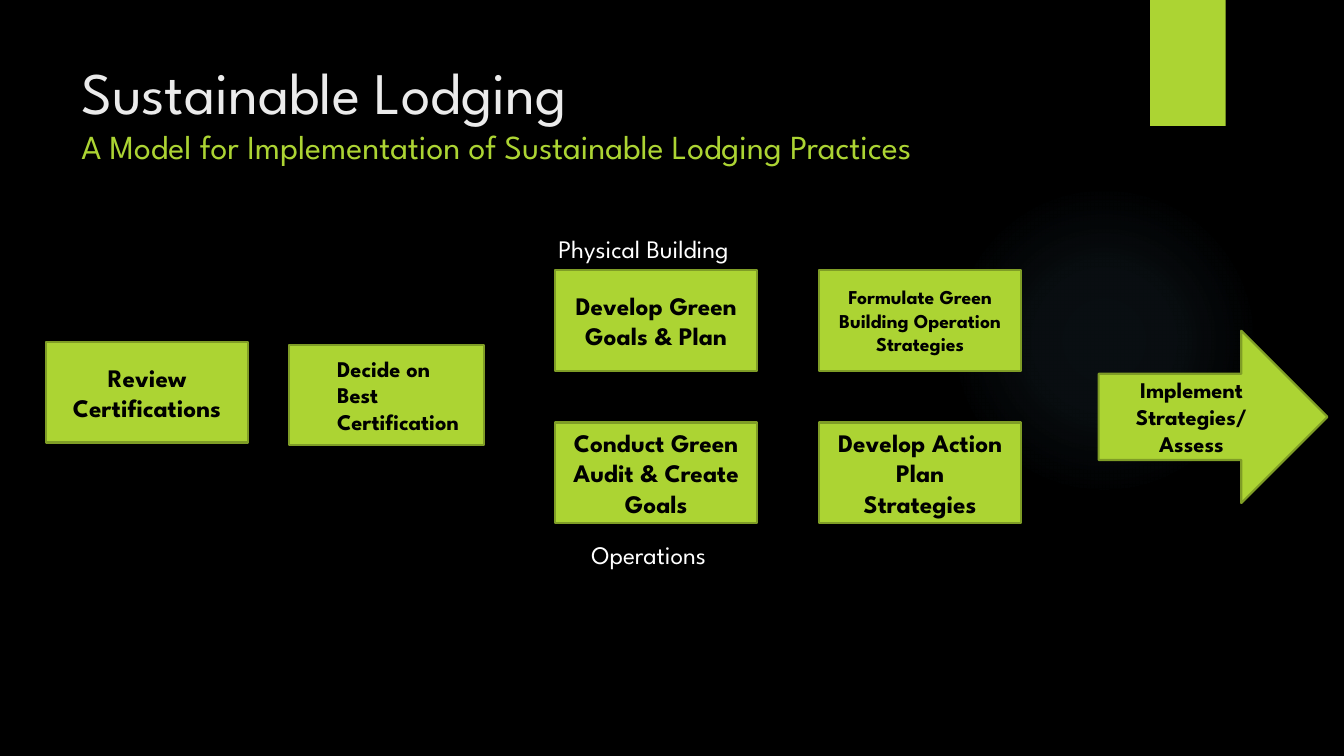
from lxml.etree import SubElement
from pptx import Presentation
from pptx.dml.color import RGBColor
from pptx.enum.shapes import MSO_SHAPE
from pptx.enum.text import MSO_ANCHOR, PP_ALIGN
from pptx.oxml.ns import qn
from pptx.util import Pt

BLACK = RGBColor(0x00, 0x00, 0x00)
WHITE = RGBColor(0xFF, 0xFF, 0xFF)
PALE = RGBColor(0xEB, 0xEB, 0xEB)
LIME = RGBColor(0xAC, 0xD4, 0x33)
OLIVE = RGBColor(0x7F, 0x9D, 0x26)
GLOW = RGBColor(0x7A, 0xC4, 0xF0)
FONT = "League Spartan"

TITLE = [("Sustainable Lodging", 42, PALE),
         ("A Model for Implementation of Sustainable Lodging Practices", 24, LIME)]
TITLE_BOX = (51.1, 36, 740.9, 110.2)

GLOW_BOX = (677.5, 131.8, 221.8, 221.8)
GLOW_STOPS = [(0, 7), (36, 6), (69, 0)]  # position and opacity in percent
TAB_BOX = (821.5, 0, 54, 90)

STEP_SIZE = (144, 72)
FIRST_STEP = (33.1, 244.1, *STEP_SIZE)
DECISION_BOX = (206.6, 246.2, 139, 72)
DECISION_INDENT = 34.2
ARROW_BOX = (784.8, 236.2, 163.4, 123.1)

TRACK_LEFT, TRACK_TOP = 396.7, 193
COLUMN_STEP, ROW_STEP = 188.6, 108.8
TRACKS = [
    [(["Develop Green Goals & Plan"], 18),
     (["Formulate Green Building Operation Strategies"], 14)],
    [(["Conduct Green Audit & Create Goals"], 18),
     (["Develop Action Plan", "Strategies"], 18)],
]
TRACK_LABELS = [("Physical Building", (391.7, 163.4, 159.1, 29.1)),
                ("Operations", (415.4, 381.6, 115.9, 29.1))]

presentation = Presentation()
presentation.slide_width, presentation.slide_height = Pt(960), Pt(540)
slide = presentation.slides.add_slide(presentation.slide_layouts[6])
slide.background.fill.solid()
slide.background.fill.fore_color.rgb = BLACK


def style_font(font, size, color, bold=False):
    for name, value in {"name": FONT, "size": Pt(size), "bold": bold}.items():
        setattr(font, name, value)
    font.color.rgb = color


def add_filled(kind, box, outlined=True):
    shape = slide.shapes.add_shape(kind, *map(Pt, box))
    shape.shadow.inherit = False
    shape.fill.solid()
    shape.fill.fore_color.rgb = LIME
    if outlined:
        shape.line.color.rgb = OLIVE
        shape.line.width = Pt(1.5)
    else:
        shape.line.fill.background()
    return shape


def add_step(lines, size, box, kind=MSO_SHAPE.RECTANGLE, align=PP_ALIGN.CENTER):
    shape = add_filled(kind, box)
    frame = shape.text_frame
    frame.text = "\n".join(lines)
    frame.word_wrap = True
    frame.vertical_anchor = MSO_ANCHOR.MIDDLE
    for paragraph in frame.paragraphs:
        paragraph.alignment = align
        style_font(paragraph.runs[0].font, size, BLACK, bold=True)
    return shape


def add_text(runs, box):
    """Place runs in one paragraph, each on its own line."""
    frame = slide.shapes.add_textbox(*map(Pt, box)).text_frame
    frame.word_wrap = True
    paragraph = frame.paragraphs[0]
    for index, (text, size, color) in enumerate(runs):
        if index:
            paragraph.add_line_break()
        run = paragraph.add_run()
        run.text = text
        style_font(run.font, size, color)


def add_glow():
    """Draw the faint circle that fades out from its centre."""
    shape = add_filled(MSO_SHAPE.OVAL, GLOW_BOX, outlined=False)
    properties = shape.fill._xPr
    solid = properties.find(qn("a:solidFill"))
    gradient = SubElement(properties, qn("a:gradFill"), rotWithShape="1")
    properties.replace(solid, gradient)
    stops = SubElement(gradient, qn("a:gsLst"))
    for position, opacity in GLOW_STOPS:
        stop = SubElement(stops, qn("a:gs"), pos=str(position * 1000))
        color = SubElement(stop, qn("a:srgbClr"), val=str(GLOW))
        SubElement(color, qn("a:alpha"), val=str(opacity * 1000))
    circle = SubElement(gradient, qn("a:path"), path="circle")
    SubElement(circle, qn("a:fillToRect"), l="50000", t="50000", r="50000", b="50000")


add_glow()
add_filled(MSO_SHAPE.RECTANGLE, TAB_BOX, outlined=False)
add_text(TITLE, TITLE_BOX)

add_step(["Review Certifications"], 18, FIRST_STEP)
decision = add_step(["Decide on Best Certification"], 16, DECISION_BOX, align=PP_ALIGN.LEFT)
decision.text_frame.margin_left = Pt(DECISION_INDENT)

for row, track in enumerate(TRACKS):
    for column, (lines, size) in enumerate(track):
        left = TRACK_LEFT + column * COLUMN_STEP
        top = TRACK_TOP + row * ROW_STEP
        add_step(lines, size, (left, top, *STEP_SIZE))

add_step(["Implement Strategies/", "Assess"], 16, ARROW_BOX, MSO_SHAPE.RIGHT_ARROW)
for label, box in TRACK_LABELS:
    add_text([(label, 18, WHITE)], box)

presentation.save("out.pptx")
